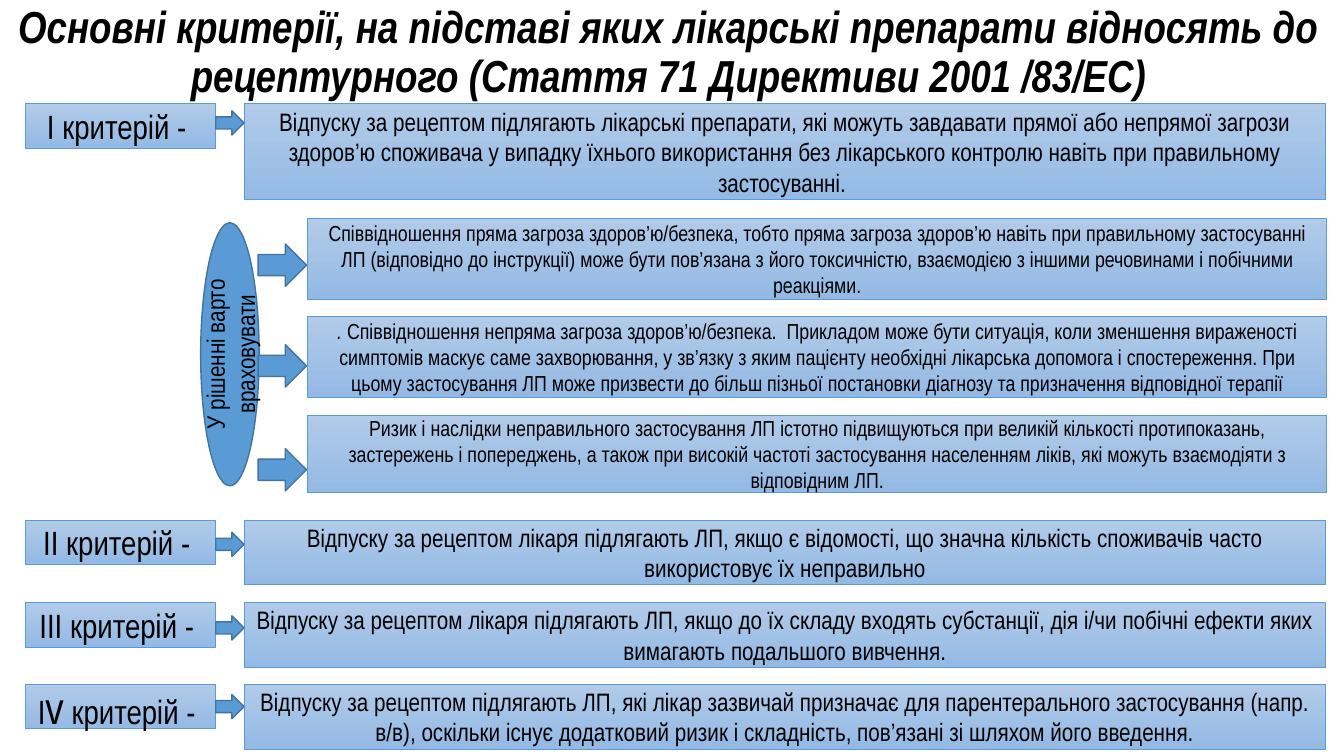
import pptx
import pptx.dml.color
import pptx.enum.shapes
import pptx.enum.text
import pptx.oxml.ns
import pptx.util

Inches, Pt = pptx.util.Inches, pptx.util.Pt
PRESET = pptx.enum.shapes.MSO_SHAPE
FONT = "Arial Narrow"
BLUE, DARK_BLUE = "5B9BD5", "43739E"

# Columns: left edge and width
LABEL = (0.25, 1.89)
SHORT_ARROW = (2.14, 0.28)
CRITERION = (2.42, 10.73)
OVAL = (1.99, 0.58)
LONG_ARROW = (2.56, 0.48)
FACTOR = (3.05, 10.11)
LABEL_HEIGHT, SHORT_ARROW_HEIGHT, LONG_ARROW_HEIGHT = 0.44, 0.24, 0.42

presentation = pptx.Presentation()
presentation.slide_width = Inches(13.33)
presentation.slide_height = Inches(7.5)
slide = presentation.slides.add_slide(presentation.slide_layouts[6])


def write(shape, runs, bold_italic=False):
    """Fill the shape with one centred paragraph of (text, size, italic) runs."""
    frame = shape.text_frame
    frame.word_wrap = True
    frame.vertical_anchor = pptx.enum.text.MSO_ANCHOR.MIDDLE
    paragraph = frame.paragraphs[0]
    paragraph.alignment = pptx.enum.text.PP_ALIGN.CENTER
    for text, size, italic in runs:
        run = paragraph.add_run()
        run.text = text
        run.font.name = FONT
        run.font.size = Pt(size)
        run.font.bold = bold_italic
        run.font.italic = italic or bold_italic
        run.font.color.rgb = pptx.dml.color.RGBColor.from_string("000000")
    return paragraph


def block(preset, column, top, height, runs=()):
    """Draw a shape in a column: rectangles get a gradient, others a plain fill."""
    left, width = column
    shape = slide.shapes.add_shape(
        preset, Inches(left), Inches(top), Inches(width), Inches(height))
    shape.shadow.inherit = False
    is_box = preset == PRESET.RECTANGLE
    rgb = pptx.dml.color.RGBColor.from_string
    if is_box:
        shape.fill.gradient()
        shape.fill.gradient_angle = 270
        for stop, color in zip(shape.fill.gradient_stops, ("B1CBE9", "93B9E4")):
            stop.color.rgb = rgb(color)
    else:
        shape.fill.solid()
        shape.fill.fore_color.rgb = rgb(BLUE)
    shape.line.color.rgb = rgb(BLUE if is_box else DARK_BLUE)
    shape.line.width = Pt(0.5 if is_box else 1)
    if runs:
        write(shape, runs)
    return shape


title = slide.shapes.add_textbox(Inches(-0.03), Inches(0.17), Inches(13.33), Inches(1.24))
title.text_frame.margin_bottom = Inches(0.57)
heading = write(title, [(
    "Основні критерії, на підставі яких лікарські препарати відносять до "
    "рецептурного (Стаття 71 Директиви 2001 /83/ЕС)", 32, True)], bold_italic=True)
heading.line_spacing = 0.9

# Top, height, arrow top, label runs, text
criteria = [
    (1.03, 0.95, 1.10, [("І критерій - ", 24, False)],
     "Відпуску за рецептом підлягають лікарські препарати, які можуть завдавати прямої "
     "або непрямої загрози здоров’ю споживача у випадку їхнього використання без "
     "лікарського контролю навіть при правильному застосуванні. "),
    (5.16, 0.64, 5.28, [("ІІ критерій - ", 24, False)],
     "Відпуску за рецептом лікаря підлягають ЛП, якщо є відомості, що значна кількість "
     "споживачів часто використовує їх неправильно"),
    (5.98, 0.64, 6.11, [("ІІІ критерій - ", 24, False)],
     "Відпуску за рецептом лікаря підлягають ЛП, якщо до їх складу входять субстанції, "
     "дія і/чи побічні ефекти яких вимагають подальшого вивчення."),
    (6.79, 0.64, 6.89,
     [("І", 24, False), ("v", 32, False), (" критерій - ", 24, False)],
     "Відпуску за рецептом підлягають ЛП, які лікар зазвичай призначає для "
     "парентерального застосування (напр. в/в), оскільки існує додатковий ризик і "
     "складність, пов’язані зі шляхом його введення."),
]
for top, height, arrow_top, label, text in criteria:
    block(PRESET.RECTANGLE, LABEL, top, LABEL_HEIGHT, label)
    block(PRESET.RECTANGLE, CRITERION, top, height, [(text, 18, False)])
    block(PRESET.RIGHT_ARROW, SHORT_ARROW, arrow_top, SHORT_ARROW_HEIGHT)

considerations = block(PRESET.OVAL, OVAL, 2.21, 2.61,
                       [("У рішенні варто враховувати", 18, False)])
body = considerations.element.find(".//" + pptx.oxml.ns.qn("a:bodyPr"))
body.set("vert", "vert270")

# Top, height, arrow top, text runs
factors = [
    (2.17, 0.80, 2.42, [(
        "Співвідношення пряма загроза здоров’ю/безпека, тобто пряма загроза здоров’ю "
        "навіть при правильному застосуванні ЛП (відповідно до інструкції) може бути "
        "пов’язана з його токсичністю, взаємодією з іншими речовинами і побічними "
        "реакціями.", 15.5, False)]),
    (3.14, 0.80, 3.42, [(".", 15.5, True), (
        " Співвідношення непряма загроза здоров’ю/безпека.  Прикладом може бути "
        "ситуація, коли зменшення вираженості симптомів маскує саме захворювання, у "
        "зв’язку з яким пацієнту необхідні лікарська допомога і спостереження. При цьому "
        "застосування ЛП може призвести до більш пізньої постановки діагнозу та "
        "призначення відповідної терапії", 15.5, False)]),
    (4.12, 0.77, 4.45, [(
        "Ризик і наслідки неправильного застосування ЛП істотно підвищуються при великій "
        "кількості протипоказань, застережень і попереджень, а також при високій частоті "
        "застосування населенням ліків, які можуть взаємодіяти з відповідним ЛП.",
        15.5, False)]),
]
for top, height, arrow_top, runs in factors:
    block(PRESET.RECTANGLE, FACTOR, top, height, runs)
    block(PRESET.RIGHT_ARROW, LONG_ARROW, arrow_top, LONG_ARROW_HEIGHT)

presentation.save("out.pptx")
